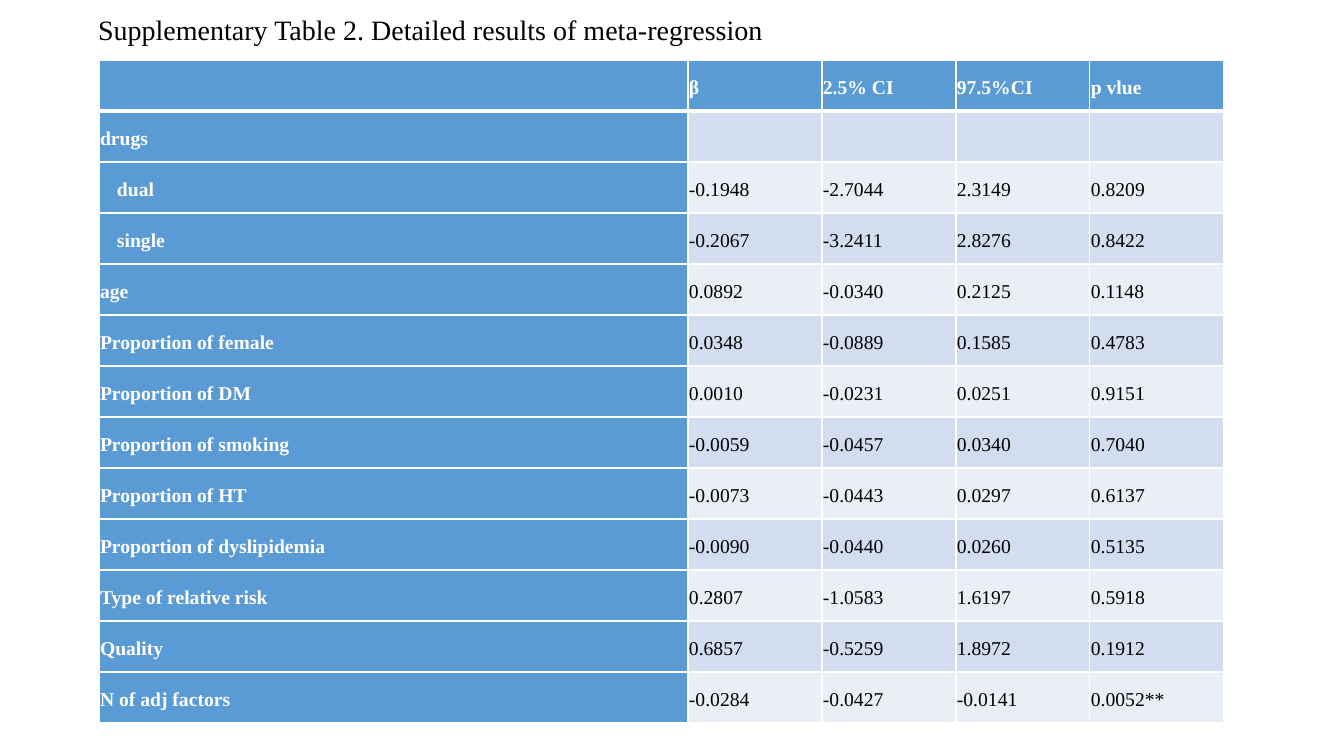
from lxml import etree
from pptx import Presentation
from pptx import util as u
from pptx.dml.color import RGBColor
from pptx.enum import text
from pptx.oxml import ns

PX = 12192000 / 1344
FONT = "Times New Roman"
WHITE, BLACK, BLUE = "FFFFFF", "000000", "5B9BD5"
BANDS = ["EAEFF7", "D2DEEF"]


def px(n):
    """Turn slide pixels into EMU."""
    return u.Emu(round(n * PX))


def add_run(p, words, size, color, bold):
    r = p.add_run()
    r.text = words
    r.font.name = FONT
    r.font.size = u.Pt(size)
    r.font.bold = bold
    r.font.color.rgb = RGBColor.from_string(color)


rows = [
    ["", "β", "2.5% CI", "97.5%CI", "p vlue"],
    ["drugs", "", "", "", ""],
    ["dual", "-0.1948", "-2.7044", "2.3149", "0.8209"],
    ["single", "-0.2067", "-3.2411", "2.8276", "0.8422"],
    ["age", "0.0892", "-0.0340", "0.2125", "0.1148"],
    ["Proportion of female", "0.0348", "-0.0889", "0.1585", "0.4783"],
    ["Proportion of DM", "0.0010", "-0.0231", "0.0251", "0.9151"],
    ["Proportion of smoking", "-0.0059", "-0.0457", "0.0340", "0.7040"],
    ["Proportion of HT", "-0.0073", "-0.0443", "0.0297", "0.6137"],
    ["Proportion of dyslipidemia", "-0.0090", "-0.0440", "0.0260", "0.5135"],
    ["Type of relative risk", "0.2807", "-1.0583", "1.6197", "0.5918"],
    ["Quality", "0.6857", "-0.5259", "1.8972", "0.1912"],
    ["N of adj factors", "-0.0284", "-0.0427", "-0.0141", "0.0052**"],
]
col_widths = [589, 134, 134, 134, 134]
row_height = 51

prs = Presentation()
prs.slide_width, prs.slide_height = px(1344), px(756)
s = prs.slides.add_slide(prs.slide_layouts[5])

title = s.shapes.title
title.left, title.top, title.width, title.height = px(88), px(0), px(1214), px(62)
tf = title.text_frame
tf.auto_size = text.MSO_AUTO_SIZE.NONE
tf.vertical_anchor = text.MSO_ANCHOR.MIDDLE
p = tf.paragraphs[0]
p.alignment = text.PP_ALIGN.LEFT
p.line_spacing = 0.9
add_run(p, "Supplementary Table 2. Detailed results of meta-regression", 20, BLACK, False)

table = s.shapes.add_table(len(rows), len(col_widths), px(99), px(60),
                           px(sum(col_widths)), px(row_height * len(rows))).table
table.first_col = True
for col, width in zip(table.columns, col_widths):
    col.width = px(width)

for i, row in enumerate(rows):
    table.rows[i].height = px(row_height)
    for j, words in enumerate(row):
        cell = table.cell(i, j)
        heading = i == 0 or j == 0
        cell.fill.solid()
        cell.fill.fore_color.rgb = RGBColor.from_string(BLUE if heading else BANDS[i % 2])
        cell.vertical_anchor = text.MSO_ANCHOR.MIDDLE

        # The rule under the header is three times as thick as the others.
        borders = {"L": 1, "R": 1, "T": 3 if i == 1 else 1, "B": 3 if i == 0 else 1}
        tcPr = cell._tc.get_or_add_tcPr()
        for k, (side, weight) in enumerate(borders.items()):
            ln = etree.Element(ns.qn(f"a:ln{side}"), w=str(u.Pt(weight)))
            fill = etree.SubElement(ln, ns.qn("a:solidFill"))
            etree.SubElement(fill, ns.qn("a:srgbClr"), val=WHITE)
            tcPr.insert(k, ln)

        if words:
            cell.margin_left = cell.margin_right = cell.margin_top = px(1)
            cell.margin_bottom = 0
            p = cell.text_frame.paragraphs[0]
            p.line_spacing = 1.15
            p.space_after = u.Pt(12)
            if words in ("dual", "single"):
                p._p.get_or_add_pPr().set("marL", str(px(17)))
            add_run(p, words, 14, WHITE if heading else BLACK, heading)

prs.save("out.pptx")
